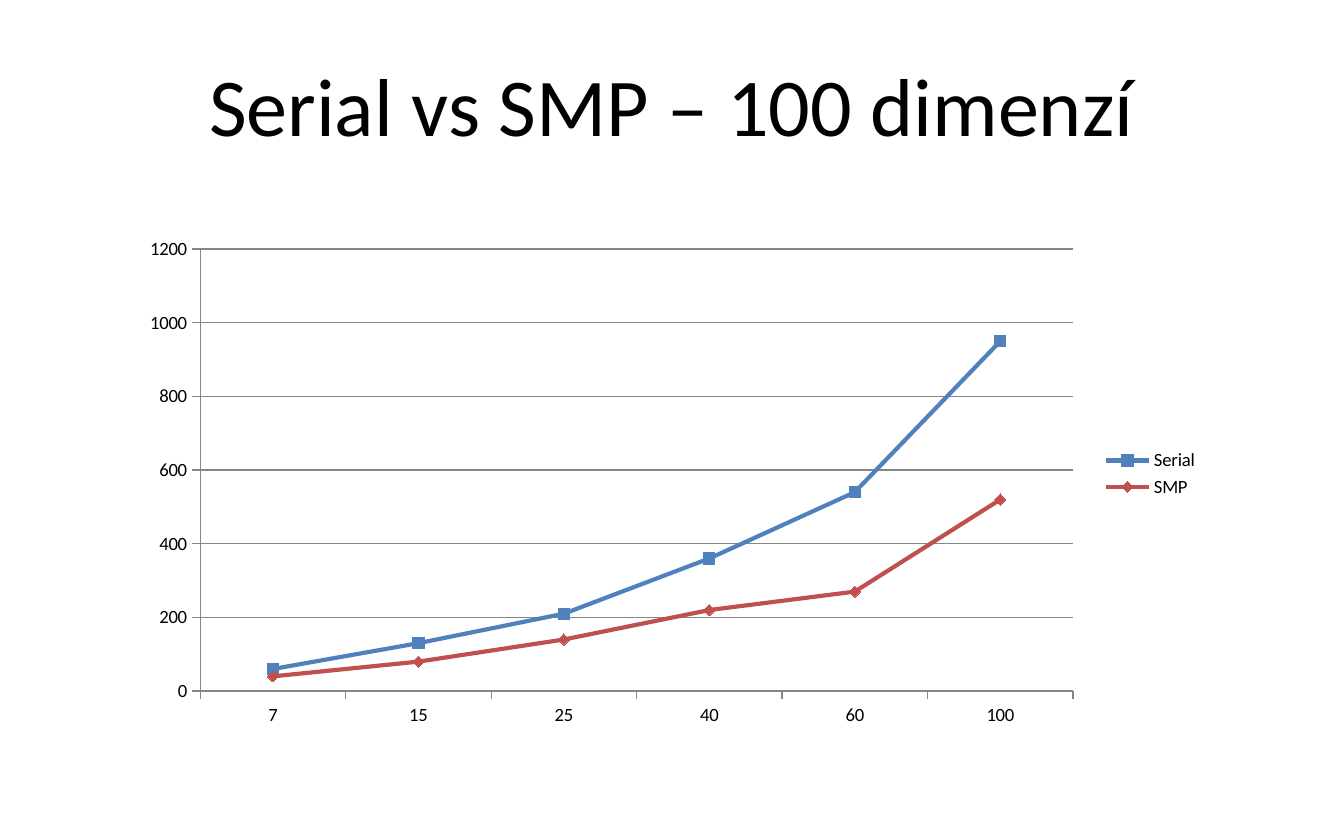
from lxml import etree
from pptx import Presentation
from pptx.chart.data import CategoryChartData
from pptx.dml.color import RGBColor
from pptx.enum.chart import (XL_CHART_TYPE, XL_LEGEND_POSITION,
                             XL_MARKER_STYLE, XL_TICK_MARK)
from pptx.enum.text import MSO_ANCHOR, PP_ALIGN
from pptx.oxml.ns import qn
from pptx.util import Inches, Pt

LINE_MARKERS = XL_CHART_TYPE.LINE_MARKERS
RIGHT = XL_LEGEND_POSITION.RIGHT
SQUARE, DIAMOND = XL_MARKER_STYLE.SQUARE, XL_MARKER_STYLE.DIAMOND
OUTSIDE = XL_TICK_MARK.OUTSIDE

BLACK = RGBColor(0x00, 0x00, 0x00)
GREY = RGBColor(0x86, 0x86, 0x86)
BLUE = RGBColor(0x4F, 0x81, 0xBD)
RED = RGBColor(0xC0, 0x50, 0x4D)
FONT = "Calibri"
TITLE_ONLY = 5

CATEGORIES = ["7", "15", "25", "40", "60", "100"]
SERIES = [
    ("Serial", [60, 130, 210, 360, 540, 950], BLUE, SQUARE),
    ("SMP", [40, 80, 140, 220, 270, 520], RED, DIAMOND),
]
PLOT_AREA = {"x": 0.054, "y": 0.059, "w": 0.816, "h": 0.868}


def style_font(font, size):
    font.name = FONT
    font.size = Pt(size)
    font.color.rgb = BLACK


def set_title(s, text):
    title = s.shapes.title
    title.left, title.top = Inches(0.5), Inches(0.25)
    title.width, title.height = Inches(9), Inches(1.04)
    tf = title.text_frame
    tf.text = text
    tf.vertical_anchor = MSO_ANCHOR.MIDDLE
    p = tf.paragraphs[0]
    p.alignment = PP_ALIGN.CENTER
    style_font(p.runs[0].font, 44)


def style_line(line, color, width):
    line.color.rgb = color
    line.width = Pt(width)


def place_plot(chart):
    """Fix the inner plot area at shares of the chart's size."""
    plot_area = chart.plots[0]._element.getparent()
    for old in plot_area.findall(qn("c:layout")):
        plot_area.remove(old)
    layout = etree.Element(qn("c:layout"))
    manual = etree.SubElement(layout, qn("c:manualLayout"))
    settings = {"layoutTarget": "inner", "xMode": "edge", "yMode": "edge"}
    for tag, value in {**settings, **PLOT_AREA}.items():
        etree.SubElement(manual, qn(f"c:{tag}")).set("val", str(value))
    plot_area.insert(0, layout)


def style_axes(chart):
    for axis in (chart.category_axis, chart.value_axis):
        axis.major_tick_mark = OUTSIDE
        style_line(axis.format.line, GREY, 0.75)
    axis = chart.value_axis
    axis.minimum_scale, axis.maximum_scale, axis.major_unit = 0, 1200, 200
    axis.has_major_gridlines = True
    style_line(axis.major_gridlines.format.line, GREY, 0.75)


def style_series(chart):
    for series, (_, _, color, marker) in zip(chart.plots[0].series, SERIES):
        series.smooth = False
        style_line(series.format.line, color, 2.25)
        series.marker.style = marker
        series.marker.size = 6
        series.marker.format.fill.solid()
        series.marker.format.fill.fore_color.rgb = color
        series.marker.format.line.color.rgb = color


def add_line_chart(s):
    data = CategoryChartData()
    data.categories = CATEGORIES
    for name, values, _, _ in SERIES:
        data.add_series(name, values)
    chart = s.shapes.add_chart(LINE_MARKERS, Inches(1.06), Inches(1.63),
                               Inches(7.96), Inches(3.79), data).chart
    style_font(chart.font, 10)
    chart.has_title = False
    chart.has_legend = True
    chart.legend.position = RIGHT
    chart.legend.include_in_layout = False
    chart.plots[0].vary_by_categories = False
    place_plot(chart)
    style_axes(chart)
    style_series(chart)


def main():
    prs = Presentation()
    prs.slide_width, prs.slide_height = Inches(10), Inches(6.25)
    s = prs.slides.add_slide(prs.slide_layouts[TITLE_ONLY])
    set_title(s, "Serial vs SMP – 100 dimenzí")
    add_line_chart(s)
    prs.save("out.pptx")


if __name__ == "__main__":
    main()
